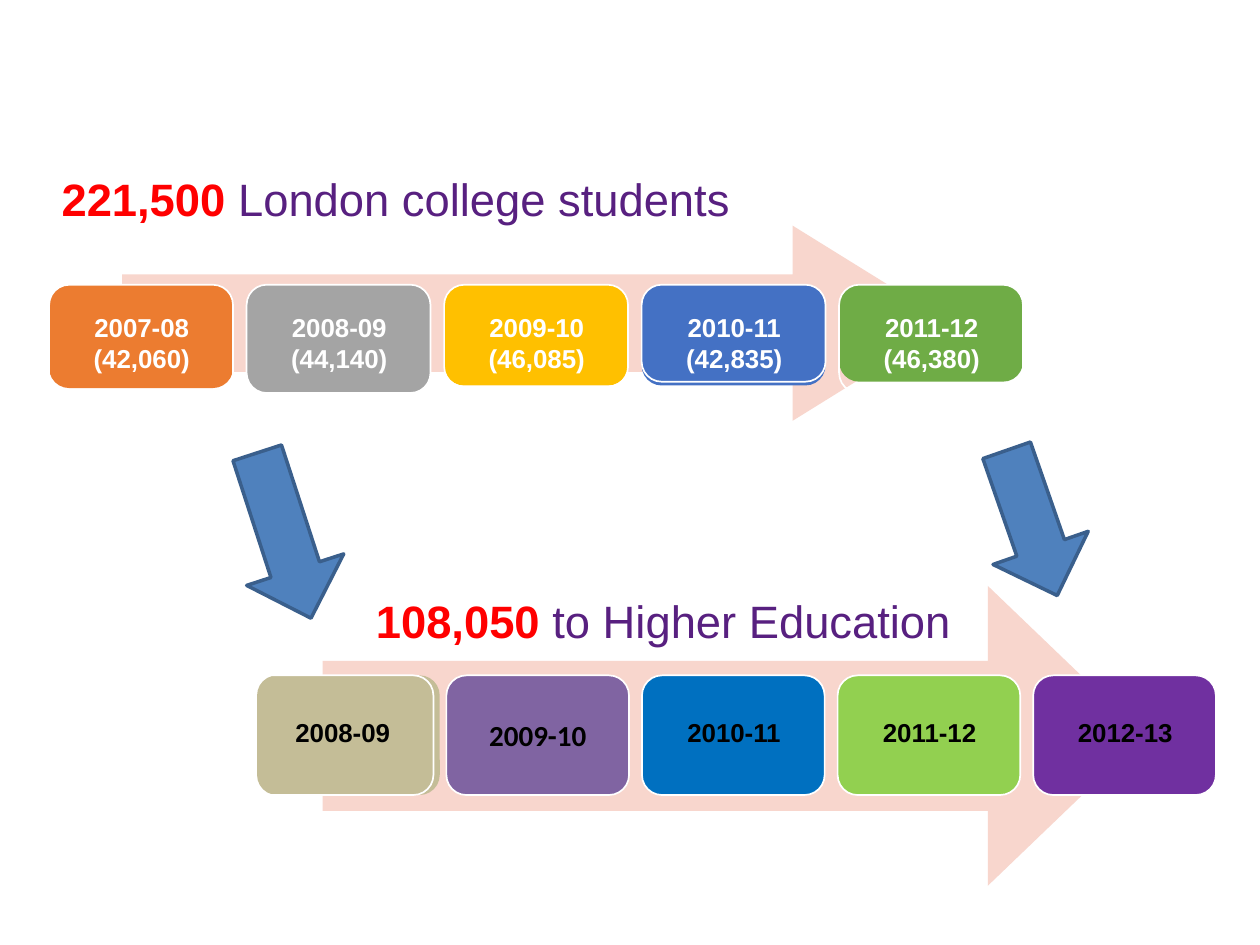
from dataclasses import dataclass

import pptx
import pptx.dml.color
import pptx.enum.shapes
import pptx.enum.text
import pptx.util

Inches = pptx.util.Inches
Pt = pptx.util.Pt
SHAPES = pptx.enum.shapes.MSO_SHAPE
ALIGN = pptx.enum.text.PP_ALIGN
ANCHOR = pptx.enum.text.MSO_ANCHOR


@dataclass(frozen=True)
class Theme:
    font: str = "Arial"
    alternate_font: str = "Calibri"
    figure: str = "FF0000"
    heading: str = "582080"
    band: str = "F8D6CD"
    border: str = "FFFFFF"
    light: str = "FFFFFF"
    dark: str = "000000"
    pointer: str = "4F81BD"
    pointer_line: str = "3A5F8C"
    heading_size: float = 25.9
    label_size: float = 14.8
    alternate_size: float = 16.6
    border_width: float = 0.96
    pointer_width: float = 2


def rgb(color):
    return pptx.dml.color.RGBColor.from_string(color)


def add_run(paragraph, text, *, size, color, font, bold=False):
    run = paragraph.add_run()
    run.text = text
    run.font.size = Pt(size)
    run.font.name = font
    run.font.bold = bold
    run.font.color.rgb = rgb(color)


class SlideBuilder:
    CORNER = 0.16
    LABEL_INSET = 0.17

    def __init__(self, slide, theme):
        self.slide = slide
        self.theme = theme

    def shape(self, kind, box, fill=None, line=None, width=0, adjust=(), rotation=0):
        shape = self.slide.shapes.add_shape(kind, *map(Inches, box))
        shape.shadow.inherit = False
        for index, value in enumerate(adjust):
            shape.adjustments[index] = value
        if fill:
            shape.fill.solid()
            shape.fill.fore_color.rgb = rgb(fill)
        else:
            shape.fill.background()
        if line:
            shape.line.color.rgb = rgb(line)
            shape.line.width = Pt(width)
        else:
            shape.line.fill.background()
        shape.rotation = rotation
        return shape

    def band(self, box, head):
        """Wide arrow behind a row of years; head is its length in inches."""
        self.shape(SHAPES.RIGHT_ARROW, box, self.theme.band, adjust=(0.5, head / box[3]))

    def pointer(self, box, rotation):
        self.shape(SHAPES.DOWN_ARROW, box, self.theme.pointer, self.theme.pointer_line,
                   self.theme.pointer_width, rotation=rotation)

    def card(self, left, top, width, fill, fill_height, border_height, shift=0):
        """Filled card with its own white border; returns the filled part."""
        body = self.shape(SHAPES.ROUNDED_RECTANGLE, (left + shift, top, width, fill_height),
                          fill, adjust=(self.CORNER / fill_height,))
        self.shape(SHAPES.ROUNDED_RECTANGLE, (left, top, width, border_height),
                   line=self.theme.border, width=self.theme.border_width,
                   adjust=(self.CORNER / border_height,))
        return body

    def label(self, card_left, top, width, height, lines, color):
        box = self.slide.shapes.add_textbox(
            *map(Inches, (card_left + self.LABEL_INSET, top, width, height)))
        frame = box.text_frame
        frame.word_wrap = True
        frame.margin_left = frame.margin_right = frame.margin_top = frame.margin_bottom = 0
        for index, line in enumerate(lines):
            paragraph = frame.add_paragraph() if index else frame.paragraphs[0]
            paragraph.alignment = ALIGN.CENTER
            add_run(paragraph, line, size=self.theme.label_size, color=color,
                    font=self.theme.font, bold=True)

    def card_text(self, card, text):
        frame = card.text_frame
        frame.vertical_anchor = ANCHOR.MIDDLE
        paragraph = frame.paragraphs[0]
        paragraph.alignment = ALIGN.CENTER
        add_run(paragraph, text, size=self.theme.alternate_size, color=self.theme.dark,
                font=self.theme.alternate_font, bold=True)

    def heading(self, box, figure, words, align=ALIGN.LEFT, spacing=None):
        frame = self.slide.shapes.add_textbox(*map(Inches, box)).text_frame
        frame.word_wrap = True
        frame.auto_size = pptx.enum.text.MSO_AUTO_SIZE.SHAPE_TO_FIT_TEXT
        paragraph = frame.paragraphs[0]
        paragraph.alignment = align
        paragraph.line_spacing = spacing
        style = dict(size=self.theme.heading_size, font=self.theme.font)
        add_run(paragraph, figure + " ", color=self.theme.figure, bold=True, **style)
        add_run(paragraph, words, color=self.theme.heading, **style)


# lines of text, fill, height of fill, height of border
COLLEGE_YEARS = [
    (("2007-08", "(42,060)"), "EC7C30", 0.82, 0.99),
    (("2008-09", "(44,140)"), "A4A4A4", 0.86, 0.86),
    (("2009-10", "(46,085)"), "FFC000", 0.80, 0.81),
    (("2010-11 (42,835)",), "4471C4", 0.80, 0.77),
    (("2011-12 (46,380)",), "6FAC46", 0.77, 0.86),
]
# year, fill, shift of fill, uses the alternate font
UNIVERSITY_YEARS = [
    ("2008-09", "C4BD97", 0.05, False),
    ("2009-10", "8064A2", 0, True),
    ("2010-11", "0070C0", 0, False),
    ("2011-12", "92D050", 0, False),
    ("2012-13", "7030A0", 0, False),
]


def college_row(builder):
    first, last = 0.39, 6.66
    pitch = (last - first) / (len(COLLEGE_YEARS) - 1)
    lefts = [first + pitch * i for i in range(len(COLLEGE_YEARS))]
    builder.band((0.97, 1.79, 6.57, 1.55), head=1.25)
    for left, (_, fill, fill_height, border_height) in zip(lefts, COLLEGE_YEARS):
        builder.card(left, 2.26, 1.46, fill, fill_height, border_height)
    for left, (lines, *_) in zip(lefts, COLLEGE_YEARS):
        builder.label(left, 2.47, 1.13, 0.58, lines, builder.theme.light)


def university_row(builder):
    first, last = 1.99, 8.20
    pitch = (last - first) / (len(UNIVERSITY_YEARS) - 1)
    builder.band((2.56, 4.65, 6.52, 2.38), head=1.24)
    for i, (year, fill, shift, alternate) in enumerate(UNIVERSITY_YEARS):
        left = first + pitch * i
        card = builder.card(left, 5.36, 1.45, fill, 0.95, 0.95, shift)
        if alternate:
            builder.card_text(card, year)
        else:
            builder.label(left, 5.69, 1.12, 0.31, (year,), builder.theme.dark)


def main():
    deck = pptx.Presentation()
    deck.slide_width, deck.slide_height = Inches(10), Inches(7.5)
    builder = SlideBuilder(deck.slides.add_slide(deck.slide_layouts[6]), Theme())

    builder.heading((0.39, 1.27, 6.18, 0.54), "221,500", "London college students",
                    spacing=1.1)
    college_row(builder)
    university_row(builder)
    builder.pointer((1.85, 3.56, 0.81, 1.38), rotation=342)
    builder.pointer((7.79, 3.54, 0.8, 1.22), rotation=340.8)
    builder.heading((2.83, 4.66, 4.87, 0.54), "108,050", "to Higher Education",
                    align=ALIGN.CENTER)
    deck.save("out.pptx")


if __name__ == "__main__":
    main()
